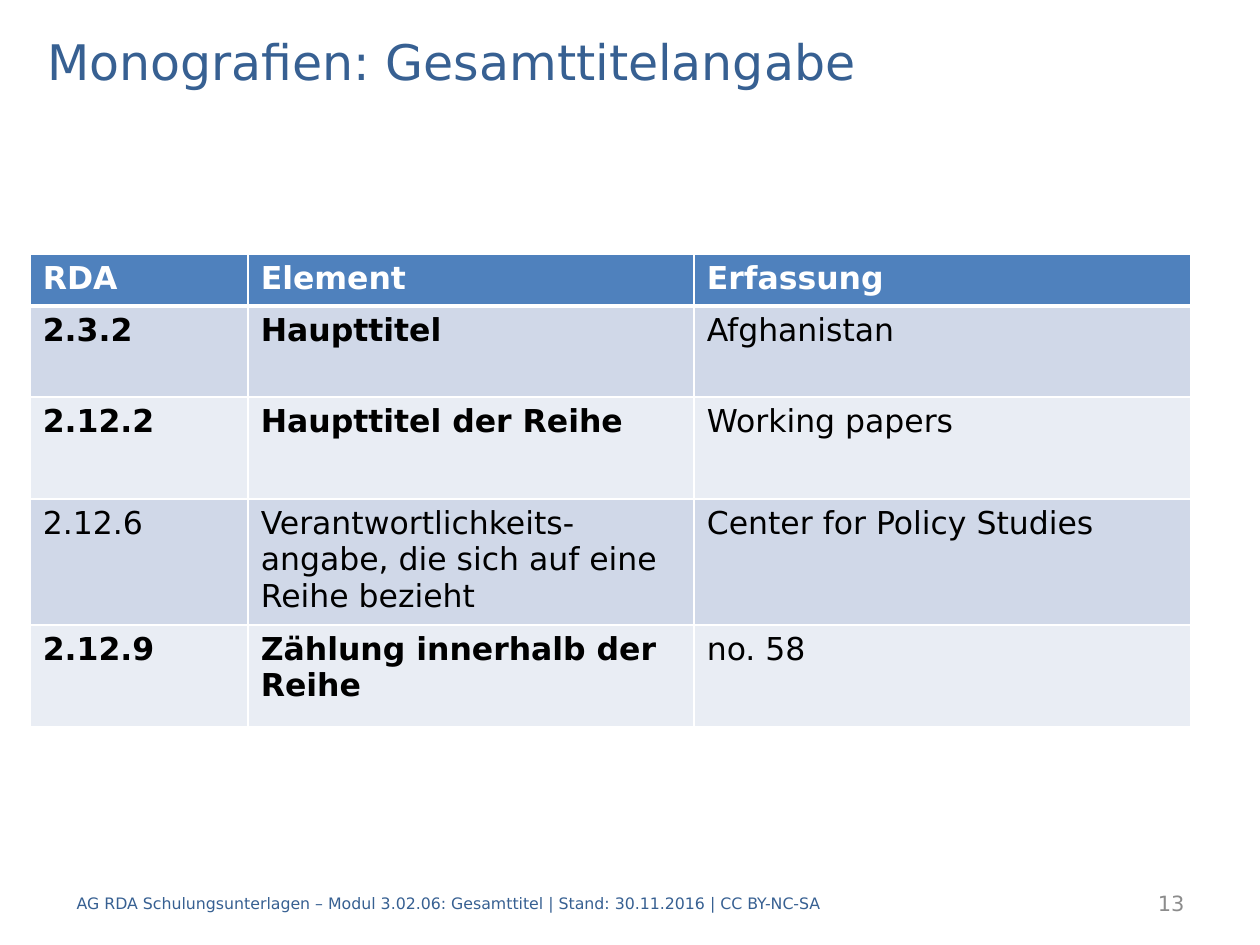
from lxml.etree import SubElement
from pptx import Presentation
from pptx.dml.color import RGBColor
from pptx.enum.text import MSO_ANCHOR, PP_ALIGN
from pptx.oxml.ns import qn
from pptx.util import Inches, Pt

FONT = "DejaVu Sans"
COLORS = {
    "title": "376092",
    "page": "8C8C8C",
    "head": "4F81BD",
    "odd": "D0D8E8",
    "even": "E9EDF4",
    "white": "FFFFFF",
    "black": "000000",
}
COLS = [1.73, 3.54, 3.94]
HEIGHTS = [0.41, 0.72, 0.81, 0.81, 0.81]
HEAD = ["RDA", "Element", "Erfassung"]
# Texts of each row, and whether its element is a core one (bold)
ROWS = [
    (["2.3.2", "Haupttitel", "Afghanistan"], True),
    (["2.12.2", "Haupttitel der Reihe", "Working papers"], True),
    (["2.12.6", "Verantwortlichkeits-angabe, die sich auf eine Reihe bezieht",
      "Center for Policy Studies"], False),
    (["2.12.9", "Zählung innerhalb der Reihe", "no. 58"], True),
]


def rgb(name):
    return RGBColor.from_string(COLORS[name])


def style(para, size, color, bold=False):
    font = para.font
    font.name, font.size, font.bold = FONT, Pt(size), bold
    font.color.rgb = rgb(color)


def add_text(slide, box, text, size, color, align=PP_ALIGN.LEFT):
    frame = slide.shapes.add_textbox(*map(Inches, box)).text_frame
    frame.word_wrap = True
    frame.vertical_anchor = MSO_ANCHOR.MIDDLE
    para = frame.paragraphs[0]
    para.text, para.alignment = text, align
    style(para, size, color)


def add_edges(cell, top, bottom):
    """Draw white cell borders; top and bottom are widths in points."""
    props = cell._tc.get_or_add_tcPr()
    for tag, width in (("lnL", 1), ("lnR", 1), ("lnT", top), ("lnB", bottom)):
        line = SubElement(props, qn(f"a:{tag}"), w=str(Pt(width)))
        fill = SubElement(line, qn("a:solidFill"))
        SubElement(fill, qn("a:srgbClr"), val=COLORS["white"])


def fill_row(table, row, texts, bolds, fill, color):
    for col, (text, bold) in enumerate(zip(texts, bolds)):
        cell = table.cell(row, col)
        add_edges(cell, 3 if row == 1 else 1, 3 if row == 0 else 1)
        cell.fill.solid()
        cell.fill.fore_color.rgb = rgb(fill)
        cell.text = text
        style(cell.text_frame.paragraphs[0], 18, color, bold)


def add_grid(slide):
    box = map(Inches, (0.24, 2.02, sum(COLS), sum(HEIGHTS)))
    table = slide.shapes.add_table(len(HEIGHTS), len(COLS), *box).table
    for col, width in zip(table.columns, COLS):
        col.width = Inches(width)
    for row, height in zip(table.rows, HEIGHTS):
        row.height = Inches(height)
    fill_row(table, 0, HEAD, [True] * 3, "head", "white")
    for row, (texts, core) in enumerate(ROWS, 1):
        fill = "odd" if row % 2 else "even"
        fill_row(table, row, texts, [core, core, False], fill, "black")


def main():
    deck = Presentation()
    deck.slide_width, deck.slide_height = Inches(10), Inches(7.5)
    slide = deck.slides.add_slide(deck.slide_layouts[6])
    add_text(slide, (0.28, 0.2, 9.45, 0.56),
             "Monografien: Gesamttitelangabe", 28, "title")
    add_grid(slide)
    add_text(slide, (0.51, 6.97, 6.69, 0.4),
             "AG RDA Schulungsunterlagen – Modul 3.02.06: Gesamttitel"
             " | Stand: 30.11.2016 | CC BY-NC-SA", 9, "title")
    add_text(slide, (7.91, 6.97, 1.59, 0.4), "13", 12, "page", PP_ALIGN.RIGHT)
    deck.save("out.pptx")


if __name__ == "__main__":
    main()
